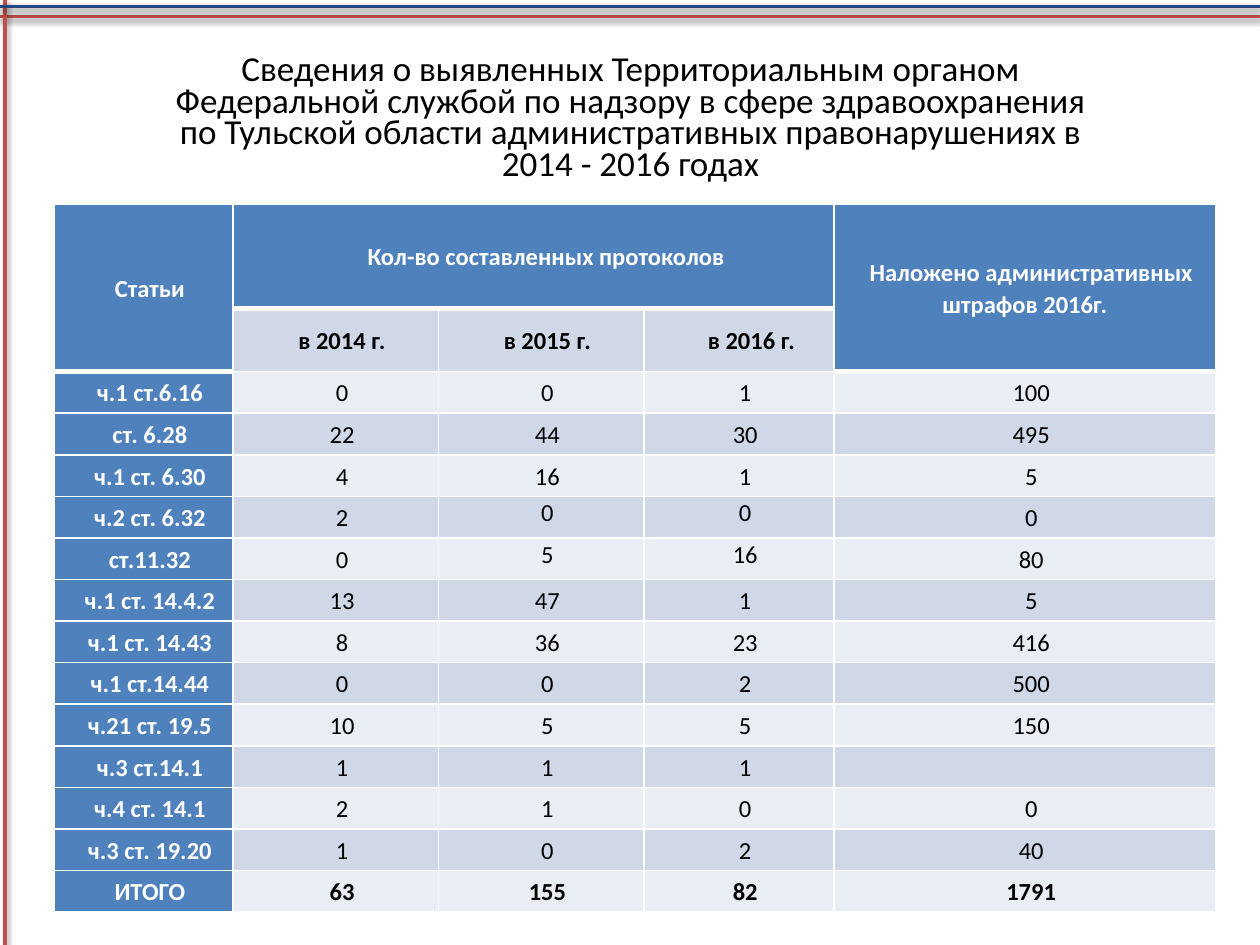
from lxml import etree
from pptx import Presentation, util as u
from pptx.dml.color import RGBColor
from pptx.enum import shapes, text
from pptx.oxml import ns, parse_xml

RED = RGBColor(0xC0, 0x50, 0x4D)
NAVY = RGBColor(0x1F, 0x49, 0x7D)
BLUE = RGBColor(0x4F, 0x81, 0xBD)
BAND_DARK = RGBColor(0xD0, 0xD8, 0xE8)
BAND_LIGHT = RGBColor(0xE9, 0xED, 0xF4)
WHITE = RGBColor(0xFF, 0xFF, 0xFF)
BLACK = RGBColor(0, 0, 0)

FONT = "Calibri"
TITLE = ("Сведения о выявленных Территориальным органом Федеральной службой "
         "по надзору в сфере здравоохранения по Тульской области "
         "административных правонарушениях в 2014 - 2016 годах")
COLUMN_WIDTHS = [1.42, 1.63, 1.63, 1.51, 3.03]
ROW_HEIGHTS = [0.83, 0.38] + [0.33] * 13
ROWS = [
    ["Статьи", "Кол-во составленных протоколов", "", "",
     "Наложено административных штрафов 2016г."],
    ["", "в 2014 г.", "в 2015 г.", "в 2016 г.", ""],
    ["ч.1 ст.6.16", "0", "0", "1", "100"],
    ["ст. 6.28", "22", "44", "30", "495"],
    ["ч.1 ст. 6.30", "4", "16", "1", "5"],
    ["ч.2 ст. 6.32", "2", "0", "0", "0"],
    ["ст.11.32", "0", "5", "16", "80"],
    ["ч.1 ст. 14.4.2", "13", "47", "1", "5"],
    ["ч.1 ст. 14.43", "8", "36", "23", "416"],
    ["ч.1 ст.14.44", "0", "0", "2", "500"],
    ["ч.21 ст. 19.5", "10", "5", "5", "150"],
    ["ч.3 ст.14.1", "1", "1", "1", ""],
    ["ч.4 ст. 14.1", "2", "1", "0", "0"],
    ["ч.3 ст. 19.20", "1", "0", "2", "40"],
    ["ИТОГО", "63", "155", "82", "1791"],
]
HEADER_CELLS = {(0, 0), (0, 1), (0, 2), (0, 3), (0, 4), (1, 0), (1, 4)}
THICK_BOTTOMS = HEADER_CELLS - {(0, 0), (0, 4)}
TOP_ANCHORED = {(5, 2), (5, 3), (6, 2), (6, 3)}
LEFT_INDENTED = {(0, 1), (1, 3)}


def add_rule(slide, start, end, color):
    """Draw one shadowed frame line between two points in inches."""
    line = slide.shapes.add_connector(
        shapes.MSO_CONNECTOR.STRAIGHT, *(u.Inches(value) for value in start + end))
    line.line.color.rgb = color
    line.line.width = u.Pt(2)
    line._element.spPr.append(parse_xml(
        f'<a:effectLst {ns.nsdecls("a")}>'
        '<a:outerShdw blurRad="39370" dist="20320" dir="5400000" rotWithShape="0">'
        '<a:srgbClr val="000000"><a:alpha val="38000"/></a:srgbClr>'
        '</a:outerShdw></a:effectLst>'))


def add_frame(slide, width, height):
    """Draw the red and navy lines along the top and left edges."""
    add_rule(slide, (width, 0.13), (0, 0.13), RED)
    add_rule(slide, (0.04, 0), (0.04, height), RED)
    add_rule(slide, (0, 0.05), (width, 0.05), NAVY)


def add_title(slide, left, top, width, height):
    """Place the centred title in the given box."""
    box = slide.shapes.add_textbox(
        u.Inches(left), u.Inches(top), u.Inches(width), u.Inches(height))
    frame = box.text_frame
    frame.word_wrap = True
    frame.vertical_anchor = text.MSO_ANCHOR.MIDDLE
    paragraph = frame.paragraphs[0]
    paragraph.text = TITLE
    paragraph.alignment = text.PP_ALIGN.CENTER
    paragraph.line_spacing = u.Pt(18)
    paragraph.font.name = FONT
    paragraph.font.size = u.Pt(20)
    paragraph.font.color.rgb = BLACK


def set_borders(cell, place):
    """Give a cell white borders, thicker where the header meets the body."""
    row, column = place
    widths = {"lnL": 1, "lnR": 1,
              "lnT": 3 if (row - 1, column) in THICK_BOTTOMS else 1,
              "lnB": 3 if place in THICK_BOTTOMS else 1}
    properties = cell._tc.get_or_add_tcPr()
    for tag, points in widths.items():
        border = etree.SubElement(properties, ns.qn(f"a:{tag}"), w=str(u.Pt(points)))
        fill = etree.SubElement(border, ns.qn("a:solidFill"))
        etree.SubElement(fill, ns.qn("a:srgbClr"), val=str(WHITE))


def style_cell(cell, place, words):
    """Fill, border and write one table cell."""
    row, column = place
    blue = place in HEADER_CELLS or column == 0
    set_borders(cell, place)
    cell.fill.solid()
    cell.fill.fore_color.rgb = BLUE if blue else BAND_DARK if row % 2 else BAND_LIGHT
    cell.margin_left = cell.margin_right = u.Inches(0.07)
    cell.margin_top = cell.margin_bottom = 0
    cell.vertical_anchor = (text.MSO_ANCHOR.TOP if place in TOP_ANCHORED
                            else text.MSO_ANCHOR.MIDDLE)
    paragraph = cell.text_frame.paragraphs[0]
    paragraph.text = words
    paragraph.alignment = text.PP_ALIGN.CENTER
    paragraph.line_spacing = 1.07
    indents = paragraph._p.get_or_add_pPr()
    indents.set("marL", str(u.Inches(0.1 if place in LEFT_INDENTED else 0)))
    indents.set("indent", str(u.Inches(0.1)))
    paragraph.font.name = FONT
    paragraph.font.size = u.Pt(14)
    paragraph.font.bold = blue or row in (1, len(ROWS) - 1)
    paragraph.font.color.rgb = WHITE if blue else BLACK


def add_violations_table(slide, left, top):
    """Place the table of protocols and fines at the given corner."""
    table = slide.shapes.add_table(
        len(ROWS), len(COLUMN_WIDTHS), u.Inches(left), u.Inches(top),
        u.Inches(sum(COLUMN_WIDTHS)), u.Inches(sum(ROW_HEIGHTS))).table
    table.first_row = table.horz_banding = False
    for column, width in zip(table.columns, COLUMN_WIDTHS):
        column.width = u.Inches(width)
    for row, height in zip(table.rows, ROW_HEIGHTS):
        row.height = u.Inches(height)
    for row, values in enumerate(ROWS):
        for column, words in enumerate(values):
            style_cell(table.cell(row, column), (row, column), words)
    for first, last in (((0, 0), (1, 0)), ((0, 1), (0, 3)), ((0, 4), (1, 4))):
        table.cell(*first).merge(table.cell(*last))
    for column in (0, 4):
        border = table.cell(0, column)._tc.tcPr.find(ns.qn("a:lnB"))
        border.set("w", str(u.Pt(3)))


def main():
    """Build the slide and save the presentation."""
    presentation = Presentation()
    presentation.slide_width = u.Inches(10)
    presentation.slide_height = u.Inches(7.5)
    slide = presentation.slides.add_slide(presentation.slide_layouts[6])
    add_frame(slide, 10, 7.5)
    add_title(slide, 1.18, 0.37, 7.65, 1.17)
    add_violations_table(slide, 0.43, 1.62)
    presentation.save("out.pptx")


if __name__ == "__main__":
    main()
